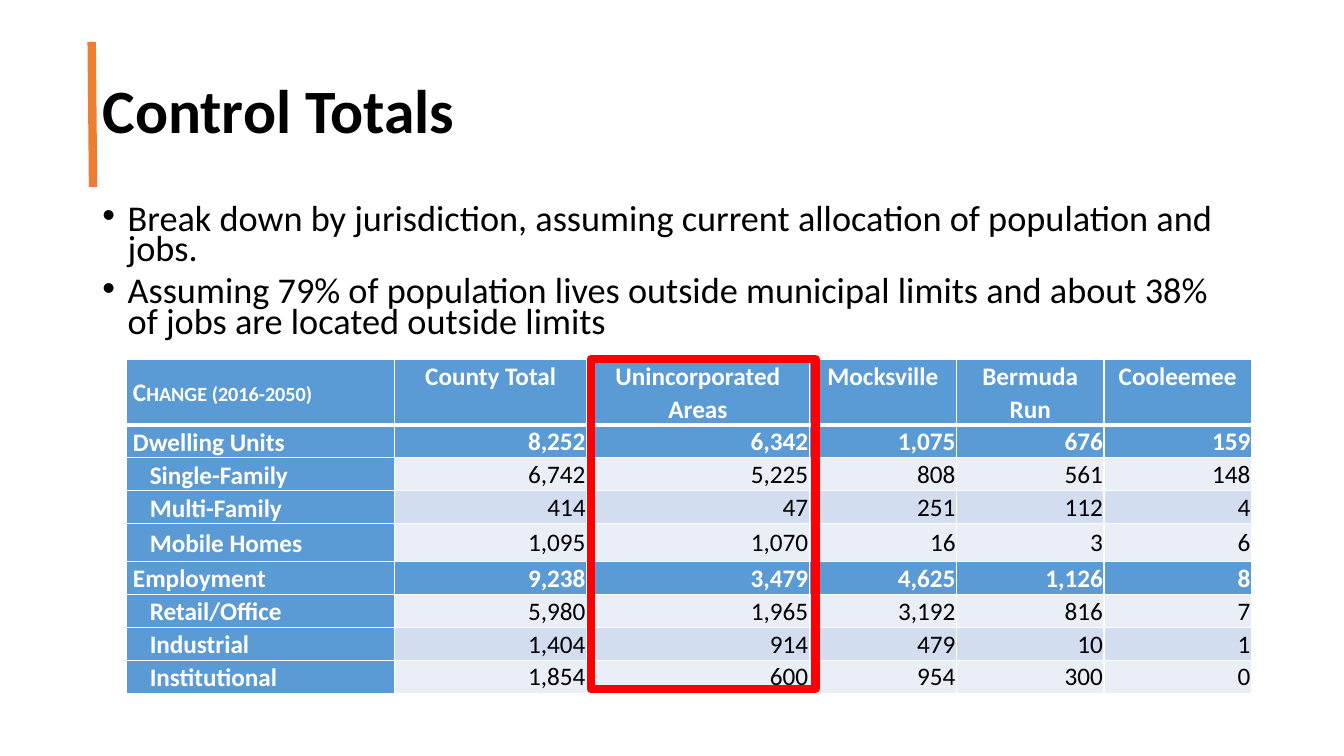
import lxml.etree
import pptx
import pptx.dml.color
import pptx.enum.shapes
import pptx.enum.text
import pptx.oxml.ns
import pptx.util

Pt = pptx.util.Pt
qn = pptx.oxml.ns.qn
ALIGN = pptx.enum.text.PP_ALIGN
ANCHOR = pptx.enum.text.MSO_ANCHOR

COLORS = {
    "text": "000000", "white": "FFFFFF", "accent": "ED7D31", "frame": "FF0000",
    "header": "5B9BD5", "light": "EAEFF7", "band": "D2DEEF",
}

BULLETS = [
    "Break down by jurisdiction, assuming current allocation of population and jobs.",
    "Assuming 79% of population lives outside municipal limits and about 38% "
    "of jobs are located outside limits",
]

HEADINGS = ["Change (2016-2050)", "County Total", "Unincorporated Areas",
            "Mocksville", "Bermuda Run", "Cooleemee"]
# Each group: its total row first, then its parts
GROUPS = [
    [["Dwelling Units", "8,252", "6,342", "1,075", "676", "159"],
     ["Single-Family", "6,742", "5,225", "808", "561", "148"],
     ["Multi-Family", "414", "47", "251", "112", "4"],
     ["Mobile Homes", "1,095", "1,070", "16", "3", "6"]],
    [["Employment", "9,238", "3,479", "4,625", "1,126", "8"],
     ["Retail/Office", "5,980", "1,965", "3,192", "816", "7"],
     ["Industrial", "1,404", "914", "479", "10", "1"],
     ["Institutional", "1,854", "600", "954", "300", "0"]],
]
COLUMN_WIDTHS = [192, 137, 159, 105.3, 105.3, 105.3]
HEADER_HEIGHT, ROW_HEIGHT, TALL_ROW_HEIGHT = 47, 23.5, 27


class SlideBuilder:
    font = "Calibri"

    def __init__(self, deck):
        self.slide = deck.slides.add_slide(deck.slide_layouts[1])

    def color(self, name):
        return pptx.dml.color.RGBColor.from_string(COLORS[name])

    def format_runs(self, para, size, color="text", bold=False):
        for span in para.runs:
            span.font.name = self.font
            span.font.size = Pt(size)
            span.font.bold = bold
            span.font.color.rgb = self.color(color)

    def place(self, box, left, top, width, height):
        box.left, box.top, box.width, box.height = map(Pt, (left, top, width, height))
        box.text_frame.word_wrap = True
        box.text_frame.auto_size = pptx.enum.text.MSO_AUTO_SIZE.NONE

    def title(self, text, bounds):
        box = self.slide.shapes.title
        self.place(box, *bounds)
        box.text_frame.text = text
        box.text_frame.vertical_anchor = ANCHOR.MIDDLE
        para = box.text_frame.paragraphs[0]
        para.alignment = ALIGN.LEFT
        para.line_spacing = 0.9
        self.format_runs(para, 44, bold=True)

    def bullets(self, items, bounds):
        box = self.slide.placeholders[1]
        self.place(box, *bounds)
        box.text_frame.text = "\n".join(items)
        for para in box.text_frame.paragraphs:
            para.line_spacing = 0.7
            para.space_before = Pt(8.5)
            self.format_runs(para, 25.9)
            properties = para._p.get_or_add_pPr()
            properties.set("marL", str(Pt(18)))
            properties.set("indent", str(-Pt(18)))
            lxml.etree.SubElement(properties, qn("a:buFont"), typeface="Arial")
            lxml.etree.SubElement(properties, qn("a:buChar"), char="•")

    def line(self, start, end, color, width):
        connector = self.slide.shapes.add_connector(
            pptx.enum.shapes.MSO_CONNECTOR.STRAIGHT, *map(Pt, start + end))
        connector.line.color.rgb = self.color(color)
        connector.line.width = Pt(width)
        lxml.etree.SubElement(connector._element.spPr, qn("a:effectLst"))

    def frame(self, bounds, color, width):
        box = self.slide.shapes.add_shape(
            pptx.enum.shapes.MSO_SHAPE.RECTANGLE, *map(Pt, bounds))
        box.shadow.inherit = False
        box.fill.background()
        box.line.color.rgb = self.color(color)
        box.line.width = Pt(width)

    def table(self, rows, left, top, widths, heights):
        table = self.slide.shapes.add_table(
            len(rows), len(widths), Pt(left), Pt(top), Pt(sum(widths)), Pt(sum(heights))).table
        for column, width in zip(table.columns, widths):
            column.width = Pt(width)
        for row, height in zip(table.rows, heights):
            row.height = Pt(height)
        return table

    def cell(self, cell, text, fill, color, bold, align, margins,
             anchor=ANCHOR.MIDDLE, spacing=1.0, bottom=1):
        for side, width in (("L", 1), ("R", 1), ("T", 1), ("B", bottom)):
            edge = lxml.etree.SubElement(
                cell._tc.get_or_add_tcPr(), qn("a:ln" + side), w=str(Pt(width)))
            solid = lxml.etree.SubElement(edge, qn("a:solidFill"))
            lxml.etree.SubElement(solid, qn("a:srgbClr"), val=COLORS["white"])
        cell.fill.solid()
        cell.fill.fore_color.rgb = self.color(fill)
        cell.margin_left, cell.margin_top, cell.margin_right, cell.margin_bottom = map(Pt, margins)
        cell.vertical_anchor = anchor
        cell.text_frame.text = text
        para = cell.text_frame.paragraphs[0]
        para.alignment = align
        para.line_spacing = spacing
        self.format_runs(para, 18, color, bold)

    def totals_table(self, left, top):
        rows = [HEADINGS] + [row for group in GROUPS for row in group]
        heights = [HEADER_HEIGHT] + [
            TALL_ROW_HEIGHT if row[0] == "Mobile Homes" else ROW_HEIGHT for row in rows[1:]]
        table = self.table(rows, left, top, COLUMN_WIDTHS, heights)

        # Header row
        for index, heading in enumerate(HEADINGS):
            self.cell(table.cell(0, index), heading, "header", "white", True,
                      ALIGN.CENTER if index else ALIGN.LEFT, (5, 0, 5, 0),
                      ANCHOR.TOP if index else ANCHOR.MIDDLE, 1.07, bottom=3)
        corner = table.cell(0, 0).text_frame.paragraphs[0].runs[0]
        corner.font._element.set("cap", "small")

        # Total rows and their banded parts
        number = 0
        for group in GROUPS:
            for part, (label, *values) in enumerate(group):
                number += 1
                self.cell(table.cell(number, 0), label, "header", "white", True, ALIGN.LEFT,
                          (17 if part else 5, 0, 5, 0), spacing=1.07)
                fill = "header" if part == 0 else "light" if part % 2 else "band"
                for column, value in enumerate(values, 1):
                    self.cell(table.cell(number, column), value, fill,
                              "text" if part else "white", part == 0, ALIGN.RIGHT,
                              (0.75, 0.75, 0.75, 0))


def main():
    deck = pptx.Presentation()
    deck.slide_width, deck.slide_height = Pt(960), Pt(540)
    page = SlideBuilder(deck)

    # Heading with accent bar
    page.line((65.5, 30), (66.5, 133.5), "accent", 6)
    page.title("Control Totals", (66, 29, 828, 104))

    # Assumptions
    page.bullets(BULLETS, (66, 144, 828, 116))

    # Totals by jurisdiction, with one column framed
    page.totals_table(90, 256.5)
    page.frame((422, 256.5, 160.5, 235.5), "frame", 6)

    deck.save("out.pptx")


if __name__ == "__main__":
    main()
